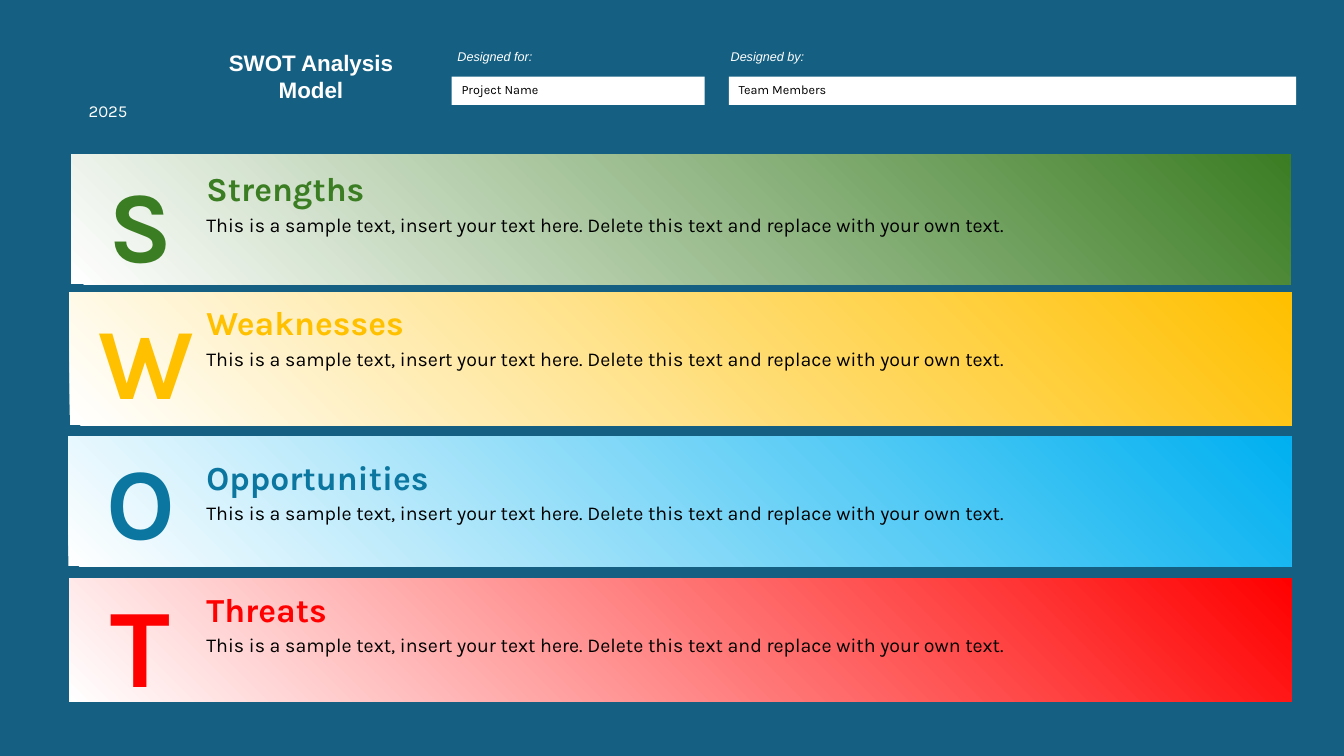
"""Build the SWOT analysis slide with four gradient bars."""
from pptx import Presentation
from pptx.dml.color import RGBColor
from pptx.enum.shapes import MSO_SHAPE
from pptx.enum.text import MSO_ANCHOR, PP_ALIGN
from pptx.util import Inches, Pt

BLUE = RGBColor(0x15, 0x60, 0x82)
WHITE = RGBColor(0xFF, 0xFF, 0xFF)
BLACK = RGBColor(0x00, 0x00, 0x00)
GREEN = RGBColor(0x3B, 0x7D, 0x23)
GOLD = RGBColor(0xFF, 0xC0, 0x00)
SKY = RGBColor(0x00, 0xB0, 0xF0)
TEAL = RGBColor(0x0B, 0x76, 0xA0)
RED = RGBColor(0xFF, 0x00, 0x00)

CELL = Inches(0.1)
COLS, ROWS = 133.33, 75
BODY = ("This is a sample text, insert your text here. "
        "Delete this text and replace with your own text.")
BARS = [
    ("Strengths", GREEN, GREEN, (7.05, 15.3, 121, 12.9), 15.5, 16.2, 72),
    ("Weaknesses", GOLD, GOLD, (6.9, 29, 121.2, 13.2), 29.1, 29.5, 72),
    ("Opportunities", TEAL, SKY, (6.8, 43.3, 121.3, 12.9), 43, 44.8, 72),
    ("Threats", RED, RED, (6.85, 57.4, 121.3, 12.2), 56.6, 57.9, 80),
]
LABELS = [("Designed for:", 44.4), ("Designed by:", 71.5)]
FIELDS = [("Project Name", 44.8, 25.1), ("Team Members", 72.3, 56.3)]

deck = Presentation()
deck.slide_width, deck.slide_height = int(COLS * CELL), ROWS * CELL
slide = deck.slides.add_slide(deck.slide_layouts[6])


def place(box):
    return [int(n * CELL) for n in box]


def write(frame, text, size, color, face="Karla", bold=False, slant=False,
          align=PP_ALIGN.LEFT, wrap=True):
    frame.word_wrap = wrap
    frame.text = text
    line = frame.paragraphs[0]
    line.alignment = align
    font = line.runs[0].font
    font.name, font.size, font.color.rgb = face, Pt(size), color
    font.bold, font.italic = bold, slant


def label(box, *args, **style):
    write(slide.shapes.add_textbox(*place(box)).text_frame, *args, **style)


def block(box, color, fade=False):
    rect = slide.shapes.add_shape(MSO_SHAPE.RECTANGLE, *place(box))
    rect.shadow.inherit = False
    rect.line.fill.background()
    if fade:
        rect.fill.gradient()
        rect.fill.gradient_angle = 45
        for stop, tone in zip(rect.fill.gradient_stops, (WHITE, color)):
            stop.color.rgb = tone
    else:
        rect.fill.solid()
        rect.fill.fore_color.rgb = color
    return rect


block((0, 0, COLS, ROWS), BLUE)
label((19.8, 4.4, 22.1, 6.4), "SWOT Analysis Model", 16, WHITE, "Arial",
      bold=True, align=PP_ALIGN.CENTER)
label((7.8, 9.5, 11.9, 3), "2025", 12, WHITE)
for text, left in LABELS:
    label((left, 4.4, 22.1, 2.5), text, 9, WHITE, "Arial", slant=True)
for text, left, width in FIELDS:
    frame = block((left, 7.6, width, 2.8), WHITE).text_frame
    frame.vertical_anchor = MSO_ANCHOR.MIDDLE
    write(frame, text, 9, BLACK)
    frame.paragraphs[0].line_spacing = 0.9

for name, ink, tint, bar, high, top, size in BARS:
    block(bar, tint, fade=True)
    label((8.8, high, 10.3, 13.1), name[0], size, ink, bold=True,
          align=PP_ALIGN.CENTER, wrap=False)
    label((19.5, top, 105.6, 5), name, 24, ink, bold=True)
    label((19.5, top + 4.4, 105.6, 3.4), BODY, 14, BLACK)

deck.save("out.pptx")
